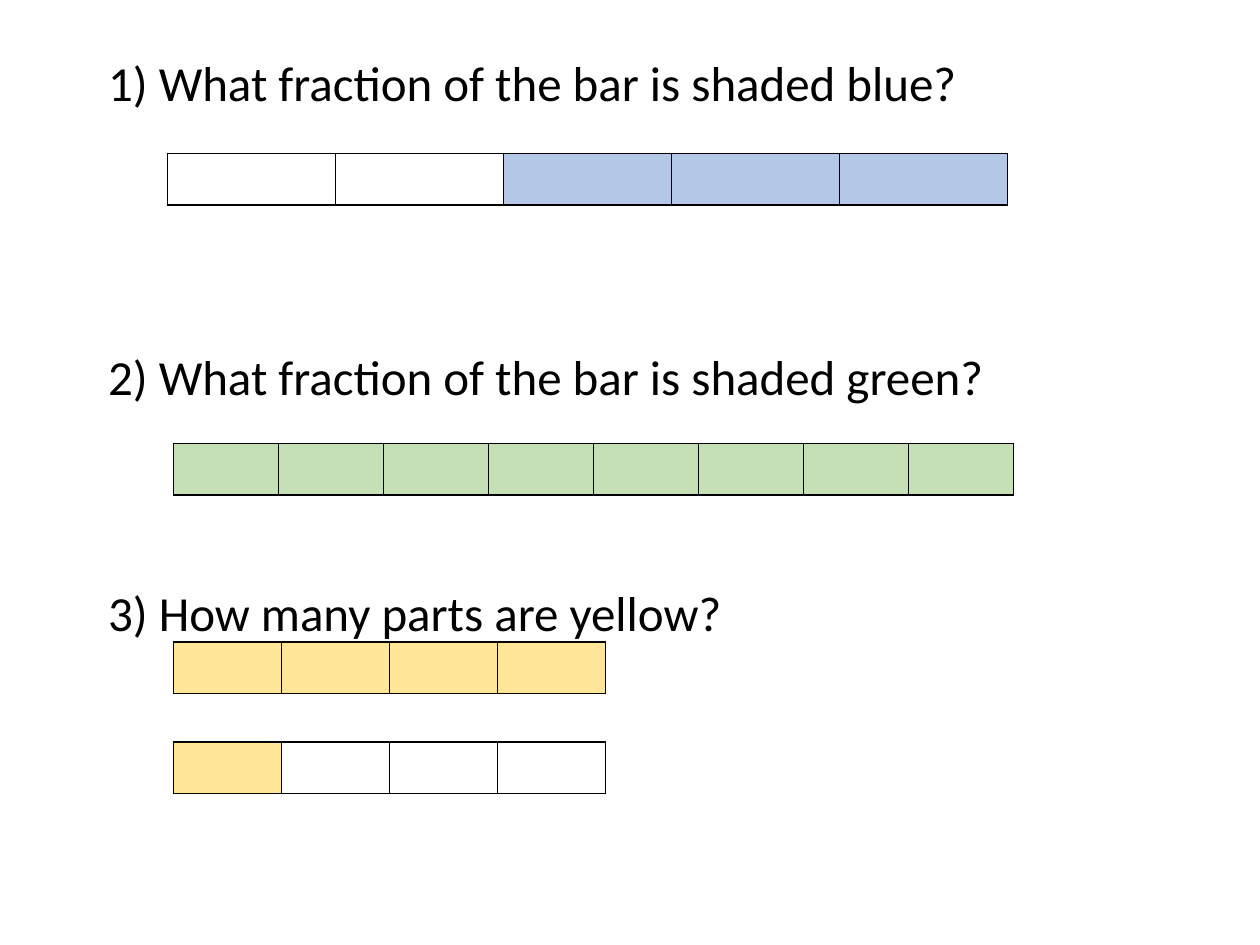
from dataclasses import dataclass

from lxml import etree
from pptx import Presentation
from pptx.dml.color import RGBColor
from pptx.oxml import ns
from pptx.util import Cm, Pt


@dataclass(frozen=True)
class Theme:
    font: str = "Calibri"
    question_size: float = 28
    border_width: float = 1
    ink: str = "000000"
    blank: str = "FFFFFF"
    blue: str = "B4C7E7"
    green: str = "C5E0B4"
    yellow: str = "FFE699"


THEME = Theme()
LINE_PITCH = 33.6  # points from one line of question text to the next
BAR_HEIGHT = 1.04

# Wording and the number of lines left free above it for the bars
QUESTIONS = [
    ("1) What fraction of the bar is shaded blue?", 0),
    ("2) What fraction of the bar is shaded green?", 4),
    ("3) How many parts are yellow?", 3),
]

# Left, top and width in centimetres, then the colour of each part
BARS = [
    (3.5, 8.94, 16.93, [THEME.green] * 8),
    (3.38, 3.09, 16.93, [THEME.blank] * 2 + [THEME.blue] * 3),
    (3.5, 12.94, 8.71, [THEME.yellow] * 4),
    (3.5, 14.96, 8.71, [THEME.yellow] + [THEME.blank] * 3),
]


def add_questions(slide, left, top, width, height):
    frame = slide.shapes.add_textbox(Cm(left), Cm(top), Cm(width), Cm(height)).text_frame
    frame.word_wrap = True
    frame.text = "\n".join(wording for wording, _ in QUESTIONS)
    for paragraph, (_, free_lines) in zip(frame.paragraphs, QUESTIONS):
        if free_lines:
            paragraph.space_before = Pt(free_lines * LINE_PITCH)
        font = paragraph.runs[0].font
        font.name = THEME.font
        font.size = Pt(THEME.question_size)
        font.color.rgb = RGBColor.from_string(THEME.ink)


def outline_cell(cell):
    properties = cell._tc.get_or_add_tcPr()
    for side in ("lnL", "lnR", "lnT", "lnB"):
        border = etree.SubElement(properties, ns.qn(f"a:{side}"), w=str(Pt(THEME.border_width)))
        fill = etree.SubElement(border, ns.qn("a:solidFill"))
        etree.SubElement(fill, ns.qn("a:srgbClr"), val=THEME.ink)


def add_bar(slide, left, top, width, part_colours):
    """Draw a bar of equal parts, one table cell for each colour."""
    bar = slide.shapes.add_table(
        1, len(part_colours), Cm(left), Cm(top), Cm(width), Cm(BAR_HEIGHT)
    ).table
    bar.first_row = False
    bar.horz_banding = False
    for part, colour in zip(bar.iter_cells(), part_colours):
        outline_cell(part)
        part.fill.solid()
        part.fill.fore_color.rgb = RGBColor.from_string(colour)


def main():
    deck = Presentation()
    deck.slide_width, deck.slide_height = Cm(25.4), Cm(19.05)
    slide = deck.slides.add_slide(deck.slide_layouts[6])
    add_questions(slide, 1.93, 0.94, 20.83, 14.63)
    for left, top, width, part_colours in BARS:
        add_bar(slide, left, top, width, part_colours)
    deck.save("out.pptx")


if __name__ == "__main__":
    main()
